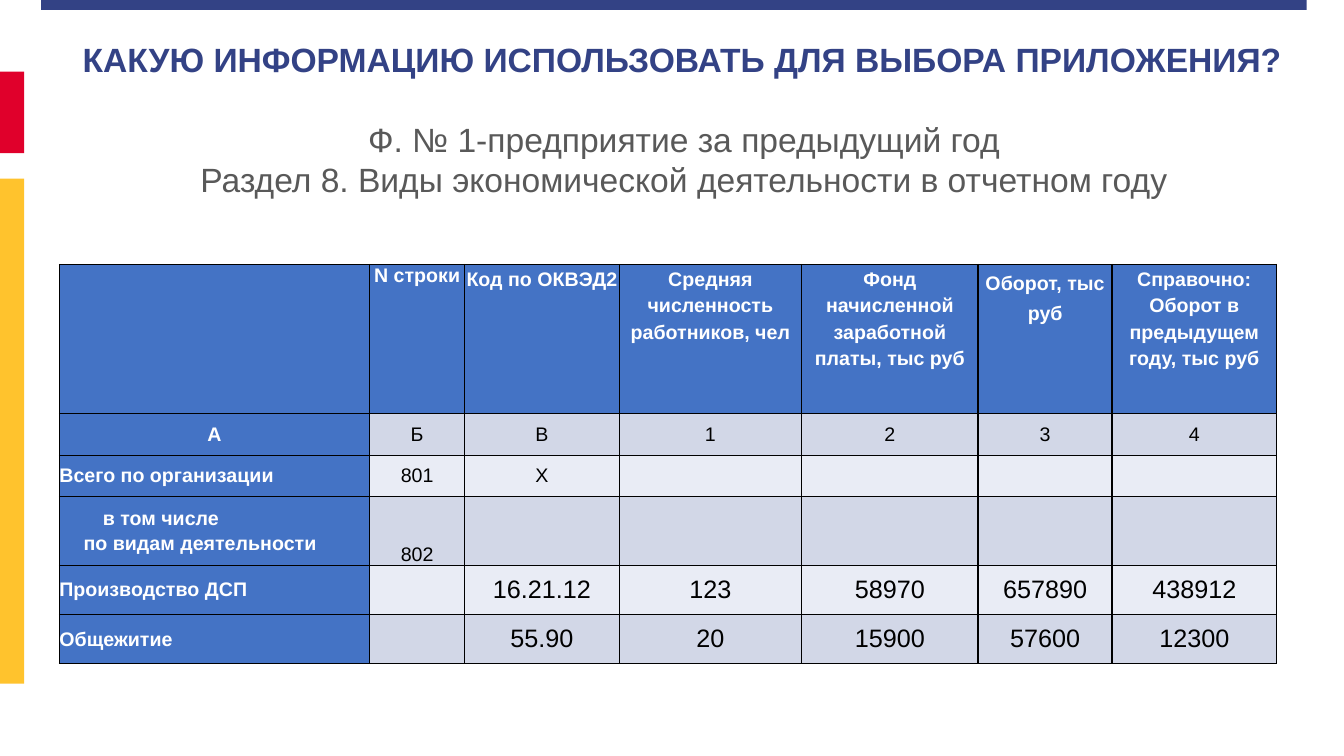
from dataclasses import dataclass

import lxml.etree
import pptx
import pptx.dml.color
import pptx.enum.shapes
import pptx.enum.text
import pptx.oxml.ns
import pptx.util

Pt = pptx.util.Pt
RGBColor = pptx.dml.color.RGBColor
Align = pptx.enum.text.PP_ALIGN
Anchor = pptx.enum.text.MSO_ANCHOR

NAVY = RGBColor(0x33, 0x42, 0x85)
RED = RGBColor(0xE0, 0x00, 0x2B)
YELLOW = RGBColor(0xFF, 0xC3, 0x2D)
GREY = RGBColor(0x59, 0x59, 0x59)
BLUE = RGBColor(0x44, 0x73, 0xC5)
DARK_BAND = RGBColor(0xD2, 0xD7, 0xE7)
LIGHT_BAND = RGBColor(0xE9, 0xEC, 0xF5)
WHITE = RGBColor(0xFF, 0xFF, 0xFF)
BLACK = RGBColor(0x00, 0x00, 0x00)


@dataclass(frozen=True)
class Bar:
    left: float
    top: float
    width: float
    height: float
    color: RGBColor


@dataclass(frozen=True)
class Column:
    width: float
    heading: str = ""
    line_spacing: float = 1.2
    left_border: float = 0.75


@dataclass(frozen=True)
class Row:
    height: float
    label: tuple[str, ...]
    values: tuple[str, ...]
    value_size: int = 14
    value_anchor: Anchor = Anchor.MIDDLE
    label_align: Align = Align.LEFT
    indents: tuple[float, ...] = (0,)
    line_gap: float = 0


BARS = (
    Bar(29.3, 0, 904, 7.1, NAVY),
    Bar(0, 51.1, 17.3, 58.3, RED),
    Bar(0, 127.6, 17.3, 360.7, YELLOW),
)
COLUMNS = (
    Column(221.7),
    Column(67.8, "N строки", 1),
    Column(110.5, "Код по ОКВЭД2"),
    Column(130.2, "Средняя численность работников, чел"),
    Column(126.2, "Фонд начисленной заработной платы, тыс руб"),
    Column(95.6, "Оборот, тыс руб", 1.37, 1.5),
    Column(117.5, "Справочно: Оборот в предыдущем году, тыс руб", 1.2, 1.5),
)
HEADING_HEIGHT = 106.6
ROWS = (
    Row(30, ("А",), ("Б", "В", "1", "2", "3", "4"), label_align=Align.CENTER),
    Row(29.4, ("Всего по организации",), ("801", "X", "", "", "", "")),
    Row(49.2, ("в том числе", "по видам деятельности"), ("802", "", "", "", "", ""),
        value_anchor=Anchor.BOTTOM, indents=(31, 17.3), line_gap=2.1),
    Row(35.1, ("Производство ДСП",),
        ("", "16.21.12", "123", "58970", "657890", "438912"), value_size=18),
    Row(35.1, ("Общежитие",),
        ("", "55.90", "20", "15900", "57600", "12300"), value_size=18),
)


def place(shape, left: float, top: float, width: float, height: float) -> None:
    shape.left, shape.top = Pt(left), Pt(top)
    shape.width, shape.height = Pt(width), Pt(height)


def clear_margins(holder) -> None:
    """Remove the inner margins of a text frame or table cell."""
    holder.margin_left = holder.margin_right = 0
    holder.margin_top = holder.margin_bottom = 0


def write_lines(frame, lines: tuple[str, ...], size: int, color: RGBColor,
                bold: bool, align: Align) -> None:
    frame.text = "\n".join(lines)
    for paragraph in frame.paragraphs:
        paragraph.alignment = align
        paragraph.font.name = "Arial"
        paragraph.font.size = Pt(size)
        paragraph.font.bold = bold
        paragraph.font.color.rgb = color


def add_bar(slide, bar: Bar) -> None:
    shape = slide.shapes.add_shape(
        pptx.enum.shapes.MSO_SHAPE.RECTANGLE,
        Pt(bar.left), Pt(bar.top), Pt(bar.width), Pt(bar.height))
    shape.shadow.inherit = False
    shape.fill.solid()
    shape.fill.fore_color.rgb = bar.color
    shape.line.fill.background()


def add_heading(slide) -> None:
    title = slide.shapes.title
    place(title, 59, 28, 865, 27.4)
    frame = title.text_frame
    clear_margins(frame)
    frame.auto_size = pptx.enum.text.MSO_AUTO_SIZE.NONE
    frame.word_wrap = False
    frame.vertical_anchor = Anchor.TOP
    write_lines(frame, ("КАКУЮ ИНФОРМАЦИЮ ИСПОЛЬЗОВАТЬ ДЛЯ ВЫБОРА ПРИЛОЖЕНИЯ?",),
                24, NAVY, True, Align.LEFT)

    form_name = slide.shapes.add_textbox(Pt(142.6), Pt(85), Pt(692), Pt(54))
    frame = form_name.text_frame
    clear_margins(frame)
    frame.word_wrap = True
    write_lines(frame, ("Ф. № 1-предприятие за предыдущий год",
                        "Раздел 8. Виды экономической деятельности в отчетном году"),
                24, GREY, False, Align.CENTER)


def format_cell(cell, fill: RGBColor, anchor: Anchor,
                left_border: float, right_border: float) -> None:
    clear_margins(cell)
    cell.vertical_anchor = anchor
    properties = cell._tc.get_or_add_tcPr()
    qn = pptx.oxml.ns.qn
    borders = {"a:lnL": left_border, "a:lnR": right_border, "a:lnT": 0.75, "a:lnB": 0.75}
    for tag, width in borders.items():
        line = lxml.etree.SubElement(properties, qn(tag), w=str(Pt(width)))
        paint = lxml.etree.SubElement(line, qn("a:solidFill"))
        lxml.etree.SubElement(paint, qn("a:srgbClr"), val=str(BLACK))
    cell.fill.solid()
    cell.fill.fore_color.rgb = fill


def fill_headings(table) -> None:
    for index, column in enumerate(COLUMNS):
        if column.heading:
            frame = table.cell(0, index).text_frame
            write_lines(frame, (column.heading,), 14, WHITE, True, Align.CENTER)
            frame.paragraphs[0].line_spacing = column.line_spacing
            frame.paragraphs[0].space_before = Pt(4.2)


def fill_row(table, number: int, row: Row) -> None:
    label = table.cell(number, 0).text_frame
    write_lines(label, row.label, 14, WHITE, True, row.label_align)
    for paragraph, indent in zip(label.paragraphs, row.indents):
        paragraph._p.get_or_add_pPr().set("indent", str(Pt(indent)))
    label.paragraphs[0].space_after = Pt(row.line_gap)
    for index, value in enumerate(row.values, start=1):
        if value:
            write_lines(table.cell(number, index).text_frame, (value,),
                        row.value_size, BLACK, False, Align.CENTER)


def add_activity_table(slide) -> None:
    heights = [HEADING_HEIGHT] + [row.height for row in ROWS]
    table = slide.shapes.add_table(
        len(heights), len(COLUMNS), Pt(42.4), Pt(188.8),
        Pt(sum(column.width for column in COLUMNS)), Pt(sum(heights))).table
    right_borders = [column.left_border for column in COLUMNS[1:]] + [0.75]
    for index, column in enumerate(COLUMNS):
        table.columns[index].width = Pt(column.width)
    for number, height in enumerate(heights):
        table.rows[number].height = Pt(height)
        band = DARK_BAND if number % 2 else LIGHT_BAND
        for index, column in enumerate(COLUMNS):
            anchor = Anchor.TOP
            if number:
                anchor = ROWS[number - 1].value_anchor if index else Anchor.MIDDLE
            fill = band if number and index else BLUE
            format_cell(table.cell(number, index), fill, anchor,
                        column.left_border, right_borders[index])
    fill_headings(table)
    for number, row in enumerate(ROWS, start=1):
        fill_row(table, number, row)


def main() -> None:
    presentation = pptx.Presentation()
    presentation.slide_width, presentation.slide_height = Pt(960), Pt(540)
    slide = presentation.slides.add_slide(presentation.slide_layouts[5])
    for bar in BARS:
        add_bar(slide, bar)
    add_heading(slide)
    add_activity_table(slide)
    presentation.save("out.pptx")


if __name__ == "__main__":
    main()
